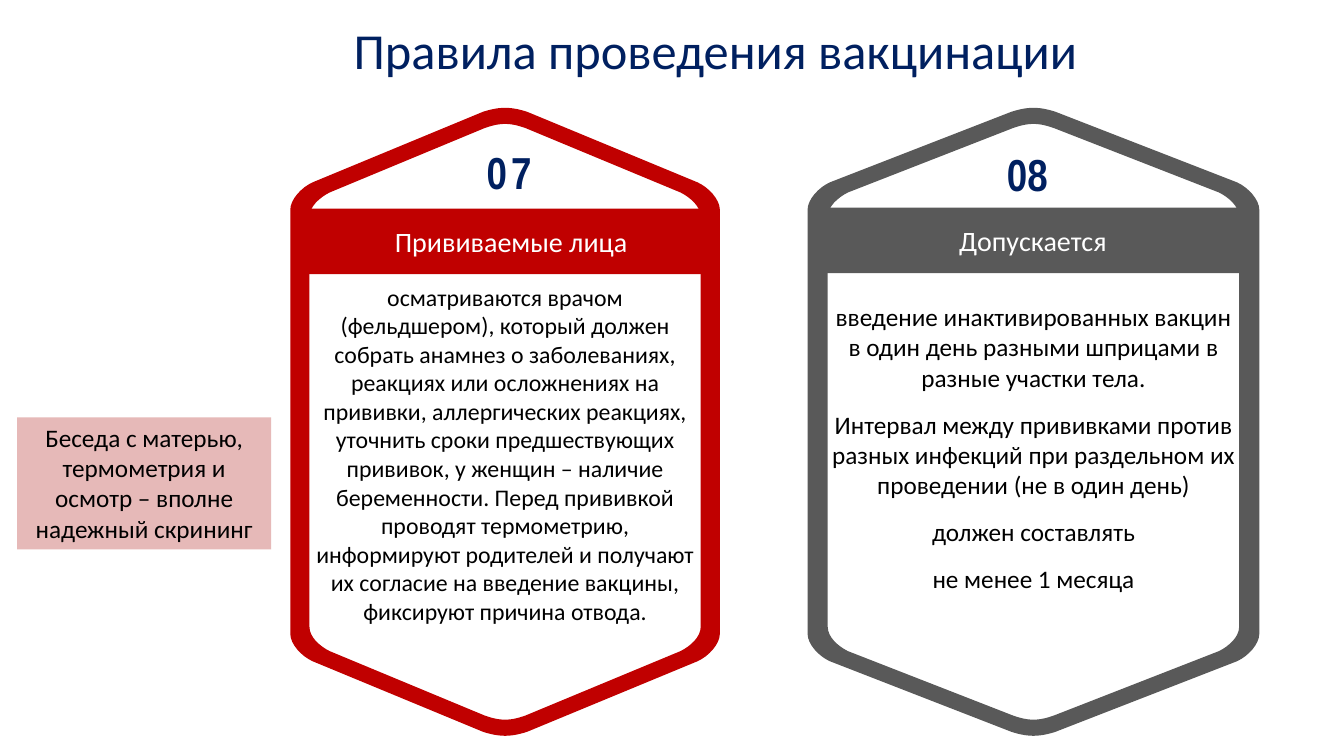
from pptx import Presentation
from pptx.dml.color import RGBColor
from pptx.enum.shapes import MSO_SHAPE as SHAPE
from pptx.enum.text import MSO_ANCHOR as ANCHOR, MSO_AUTO_SIZE as AUTO, PP_ALIGN as ALIGN
from pptx.util import Inches, Pt

COLORS = {"red": "C00000", "gray": "595959", "navy": "002060",
          "pink": "E6B9B8", "black": "000000", "white": "FFFFFF"}
MIDDLE_Y = 4.185
CURVE_STEPS = 8

EXAMINATION = [
    "осматриваются врачом (фельдшером), который должен собрать анамнез о "
    "заболеваниях, реакциях или осложнениях на прививки, аллергических реакциях, "
    "уточнить сроки предшествующих прививок, у женщин – наличие беременности. "
    "Перед прививкой проводят термометрию, информируют родителей и получают их "
    "согласие на введение вакцины, фиксируют причина отвода.",
]
INTERVALS = [
    "введение инактивированных вакцин в один день разными шприцами в разные участки тела.",
    "Интервал между прививками против разных инфекций при раздельном их "
    "проведении (не в один день)",
    "должен составлять",
    "не менее 1 месяца",
]


def rgb(name):
    return RGBColor.from_string(COLORS[name])


def paint(sp, color):
    sp.shadow.inherit = False
    sp.fill.solid()
    sp.fill.fore_color.rgb = rgb(color)
    sp.line.fill.background()


def write(sp, lines, size, color, font="Calibri", bold=False, align=ALIGN.CENTER, gap=0):
    tf = sp.text_frame
    for i, line in enumerate(lines):
        p = tf.paragraphs[0] if i == 0 else tf.add_paragraph()
        p.text = line
        p.alignment = align
        p.space_before = Pt(gap if i else 0)
        p.space_after = Pt(gap)
        p.font.name = font
        p.font.size = Pt(size)
        p.font.bold = bold
        p.font.color.rgb = rgb(color)


def add_text(s, box, lines, size, color, inset=0, wrap=True, **style):
    sp = s.shapes.add_textbox(*map(Inches, box))
    tf = sp.text_frame
    tf.word_wrap = wrap
    tf.auto_size = AUTO.SHAPE_TO_FIT_TEXT
    tf.margin_left = tf.margin_right = Inches(inset)
    tf.margin_top = tf.margin_bottom = Inches(inset / 2)
    write(sp, lines, size, color, **style)
    return sp


def add_block(s, box, fill, text, size, color, anchor=ANCHOR.MIDDLE):
    sp = s.shapes.add_shape(SHAPE.RECTANGLE, *map(Inches, box))
    paint(sp, fill)
    sp.text_frame.word_wrap = True
    sp.text_frame.vertical_anchor = anchor
    write(sp, [text], size, color)


def bezier(a, b, c, d):
    for i in range(CURVE_STEPS + 1):
        t = i / CURVE_STEPS
        u = 1 - t
        yield tuple(u**3 * m + 3 * u * u * t * n + 3 * u * t * t * o + t**3 * q
                    for m, n, o, q in zip(a, b, c, d))


def hexagon(center, half, inset, top, cap, shoulder, side):
    quarter = [
        *bezier((0, top), (0.08, top), (inset - 0.06, cap - 0.02), (inset, cap)),
        *bezier((half - inset, shoulder), (half - inset / 2, shoulder + 0.05),
                (half, side - 0.1), (half, side)),
    ]
    right = quarter + [(x, 2 * MIDDLE_Y - y) for x, y in reversed(quarter)]
    outline = right + [(-x, y) for x, y in reversed(right)]
    return [(Inches(center + x), Inches(y)) for x, y in outline]


def add_frame(s, center, outer_half, inner_half, color):
    outer = hexagon(center, outer_half, 0.22, 1.07, 1.11, 1.81, 2.08)
    inner = hexagon(center, inner_half, 0.2, 1.23, 1.27, 1.91, 2.15)
    builder = s.shapes.build_freeform(*outer[0], scale=1.0)
    builder.add_line_segments(outer[1:], close=True)
    builder.move_to(*inner[0])
    builder.add_line_segments(inner[1:], close=True)
    paint(builder.convert_to_shape(), color)


def add_number(s, box, number, spacing=0):
    sp = add_text(s, box, [number], 32, "navy", font="Arial Narrow", bold=True)
    if spacing:
        r = sp.text_frame.paragraphs[0].runs[0]
        r._r.get_or_add_rPr().set("spc", str(spacing * 100))


def main():
    prs = Presentation()
    prs.slide_width, prs.slide_height = Inches(13.33), Inches(7.5)
    s = prs.slides.add_slide(prs.slide_layouts[6])

    add_frame(s, 5.01, 2.13, 1.94, "red")
    add_text(s, (3.12, 2.8, 3.78, 3.43), EXAMINATION, 17, "black")
    add_number(s, (4.78, 1.44, 0.54, 0.54), "07", spacing=3)
    add_block(s, (3.06, 2.07, 4.02, 0.65), "red", "Прививаемые лица", 20, "white")

    add_frame(s, 10.25, 2.24, 2.04, "gray")
    add_block(s, (8.18, 2.06, 4.13, 0.65), "gray", "Допускается", 20, "white")
    add_text(s, (8.24, 2.99, 4.02, 2.93), INTERVALS, 18, "black", gap=6)
    add_number(s, (9.93, 1.46, 0.52, 0.54), "08")

    add_text(s, (3.41, 0.14, 7.46, 0.71), ["Правила проведения вакцинации"], 36, "navy",
             inset=0.1, wrap=False, align=ALIGN.LEFT)
    add_block(s, (0.17, 4.14, 2.52, 1.31), "pink",
              "Беседа с матерью, термометрия и осмотр – вполне надежный скрининг",
              18, "black", anchor=ANCHOR.TOP)
    prs.save("out.pptx")


if __name__ == "__main__":
    main()
